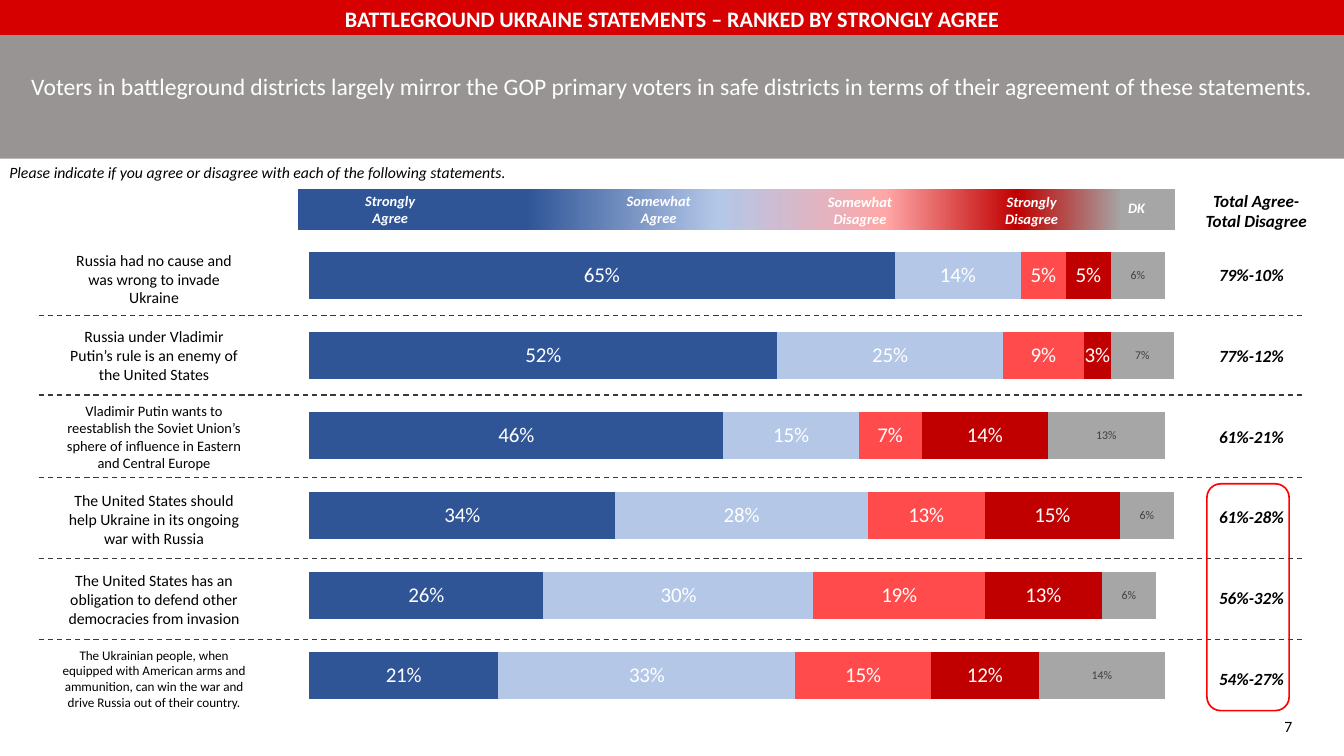
from lxml import etree
from pptx import Presentation
from pptx.chart.data import CategoryChartData
from pptx.dml.color import RGBColor
from pptx.enum.chart import XL_CHART_TYPE, XL_LABEL_POSITION
from pptx.enum.dml import MSO_LINE
from pptx.enum.shapes import MSO_CONNECTOR, MSO_SHAPE
from pptx.enum.text import MSO_ANCHOR, PP_ALIGN
from pptx.oxml.ns import qn
from pptx.util import Inches, Pt

RECT, ROUND_RECT = MSO_SHAPE.RECTANGLE, MSO_SHAPE.ROUNDED_RECTANGLE
LEFT, CENTER = PP_ALIGN.LEFT, PP_ALIGN.CENTER
W, H = 14.22, 8
FONT = "Calibri"
COLORS = {
    "banner": "D60000", "band": "989494", "white": "FFFFFF", "black": "000000",
    "strong_agree": "2F5597", "some_agree": "B4C7E7", "some_disagree": "FF4B4B",
    "strong_disagree": "C00000", "dk": "A6A6A6", "pink": "FFA7A7",
    "dk_label": "404040", "divider": "3B3838", "highlight": "FF0000",
}
SERIES = ["strong_agree", "some_agree", "some_disagree", "strong_disagree", "dk"]
GRADIENT = [(26, "strong_agree"), (48, "some_agree"), (67, "pink"),
            (82, "strong_disagree"), (94, "dk")]

# statement, text size, centre of the text, total, chart values
ROWS = [
    ("Russia had no cause and was wrong to invade Ukraine",
     12, 2.95, "79%-10%", (0.65, 0.14, 0.05, 0.05, 0.06)),
    ("Russia under Vladimir Putin’s rule is an enemy of the United States",
     12, 3.76, "77%-12%", (0.52, 0.25, 0.09, 0.03, 0.07)),
    ("Vladimir Putin wants to reestablish the Soviet Union’s sphere of "
     "influence in Eastern and Central Europe",
     11, 4.62, "61%-21%", (0.46, 0.15, 0.07, 0.14, 0.13)),
    ("The United States should help Ukraine in its ongoing war with Russia",
     12, 5.49, "61%-28%", (0.34, 0.28, 0.13, 0.15, 0.06)),
    ("The United States has an obligation to defend other democracies "
     "from invasion",
     12, 6.34, "56%-32%", (0.26, 0.30, 0.19, 0.13, 0.06)),
    ("The Ukrainian people, when equipped with American arms and ammunition, "
     "can win the war and drive Russia out of their country.",
     10, 7.18, "54%-27%", (0.21, 0.33, 0.15, 0.12, 0.14)),
]
DIVIDERS = [3.34, 4.18, 5.05, 5.91, 6.77]
# lines, left, top, width, height
LEGEND = [
    (["Strongly", "Agree"], 3.2, 1.99, 1.86, 0.45),
    (["Somewhat", "Agree"], 5.88, 1.99, 2.18, 0.45),
    (["Somewhat Disagree"], 8.42, 1.99, 1.36, 0.47),
    (["Strongly Disagree"], 10.29, 1.99, 1.25, 0.47),
    (["DK"], 11.58, 2.07, 0.89, 0.25),
]


def rgb(name):
    return RGBColor.from_string(COLORS[name])


def box(*lengths):
    return [Inches(v) for v in lengths]


def style(font, size, color, bold=False, italic=False):
    font.name, font.size = FONT, Pt(size)
    font.bold, font.italic = bold, italic
    font.color.rgb = rgb(color)


def write(tf, lines, size, color="black", align=CENTER, **emphasis):
    tf.word_wrap = True
    tf.vertical_anchor = MSO_ANCHOR.MIDDLE
    for i, line in enumerate(lines):
        p = tf.add_paragraph() if i else tf.paragraphs[0]
        p.alignment = align
        r = p.add_run()
        r.text = line
        style(r.font, size, color, **emphasis)


def add_text(s, lines, at, size, **options):
    write(s.shapes.add_textbox(*box(*at)).text_frame, lines, size, **options)


def add_block(s, at, color):
    sp = s.shapes.add_shape(RECT, *box(*at))
    sp.shadow.inherit = False
    sp.fill.solid()
    sp.fill.fore_color.rgb = rgb(color)
    sp.line.fill.background()
    return sp


def add_title(s, text):
    title = s.shapes.title
    title.left, title.top, title.width, title.height = box(0, 0, W, 0.39)
    write(title.text_frame, [text], 16.8, "white", bold=True)
    title.element.getparent().append(title.element)  # in front of the bands


def add_legend(s):
    bar = add_block(s, (3.15, 2, 9.28, 0.43), "dk")
    bar.fill.gradient()
    bar.fill.gradient_angle = 0
    stops = bar.element.find(".//" + qn("a:gsLst"))
    for stop in list(stops):
        stops.remove(stop)
    for percent, color in GRADIENT:
        gs = etree.SubElement(stops, qn("a:gs"), pos=str(percent * 1000))
        etree.SubElement(gs, qn("a:srgbClr"), val=COLORS[color])
    for lines, *at in LEGEND:
        add_text(s, lines, at, 11, color="white", bold=True, italic=True)


def add_divider(s, y):
    line = s.shapes.add_connector(MSO_CONNECTOR.STRAIGHT, *box(0.41, y, 13.81, y))
    line.line.color.rgb = rgb("divider")
    line.line.width = Pt(1)
    line.line.dash_style = MSO_LINE.DASH
    etree.SubElement(line.element.spPr, qn("a:effectLst"))


def add_highlight(s):
    sp = s.shapes.add_shape(ROUND_RECT, *box(12.77, 5.12, 0.87, 2.4))
    sp.shadow.inherit = False
    sp.fill.background()
    sp.line.color.rgb = rgb("highlight")
    sp.line.width = Pt(1.25)


def place_plot(chart, x, y, w, h):
    """Fix the inner plot area, as shares of the chart's size."""
    area = chart.element.find(".//" + qn("c:plotArea"))
    for old in area.findall(qn("c:layout")):
        area.remove(old)
    layout = etree.Element(qn("c:layout"))
    area.insert(0, layout)
    manual = etree.SubElement(layout, qn("c:manualLayout"))
    settings = [("layoutTarget", "inner"), ("xMode", "edge"), ("yMode", "edge"),
                ("x", x), ("y", y), ("w", w), ("h", h)]
    for tag, value in settings:
        etree.SubElement(manual, qn("c:" + tag), val=str(value))


def add_bars(s):
    rows = ROWS[::-1]  # a bar chart counts from the bottom
    data = CategoryChartData(number_format="0%")
    data.categories = [str(i + 1) for i in range(len(rows))]
    for i in range(len(SERIES)):
        data.add_series(f"Series {i + 1}", [row[-1][i] for row in rows])
    chart = s.shapes.add_chart(XL_CHART_TYPE.BAR_STACKED,
                               *box(2.29, 2.25, 10.65, 5.61), data).chart
    style(chart.font, 10, "black")
    chart.has_title = chart.has_legend = False
    axis = chart.value_axis
    axis.minimum_scale, axis.maximum_scale = 0, 1
    axis.has_major_gridlines = False
    axis.visible = chart.category_axis.visible = False
    plot = chart.plots[0]
    plot.gap_width, plot.overlap = 70, 100
    plot.vary_by_categories = False
    for series, color in zip(plot.series, SERIES):
        series.format.fill.solid()
        series.format.fill.fore_color.rgb = rgb(color)
        labels = series.data_labels
        labels.show_value = True
        labels.position = XL_LABEL_POSITION.CENTER
        labels.number_format, labels.number_format_is_linked = "0%", False
        style(labels.font, *((9, "dk_label") if color == "dk" else (16, "white")))
    place_plot(chart, 0.092, 0.044, 0.895, 0.904)


def main():
    prs = Presentation()
    prs.slide_width, prs.slide_height = box(W, H)
    s = prs.slides.add_slide(prs.slide_layouts[5])
    add_block(s, (0, 0, W, 1.68), "band")
    add_block(s, (0, 0, W, 0.37), "banner")
    add_title(s, "BATTLEGROUND UKRAINE STATEMENTS – RANKED BY STRONGLY AGREE")
    add_text(s, ["Voters in battleground districts largely mirror the GOP primary "
                 "voters in safe districts in terms of their agreement of these "
                 "statements."], (0, 0.71, W, 0.4), 18, color="white")
    add_text(s, ["Please indicate if you agree or disagree with each of the "
                 "following statements."], (0, 1.67, 5.6, 0.3), 12,
             align=LEFT, italic=True)
    add_legend(s)
    for y in DIVIDERS:
        add_divider(s, y)
    add_text(s, ["Total Agree-Total Disagree"], (12.61, 1.96, 1.36, 0.54), 13,
             bold=True, italic=True)
    pitch = (7.02 - 2.75) / (len(ROWS) - 1)
    for i, (statement, size, middle, total, _) in enumerate(ROWS):
        width = 2.24 if size == 10 else 2.12
        add_text(s, [statement], (1.63 - width / 2, middle - 0.36, width, 0.72), size)
        add_text(s, [total], (12.75, 2.75 + i * pitch, 0.98, 0.32), 13,
                 bold=True, italic=True)
    add_highlight(s)
    add_bars(s)
    add_text(s, ["7"], (13.49, 7.53, 0.56, 0.3), 12, align=LEFT)
    prs.save("out.pptx")


if __name__ == "__main__":
    main()
